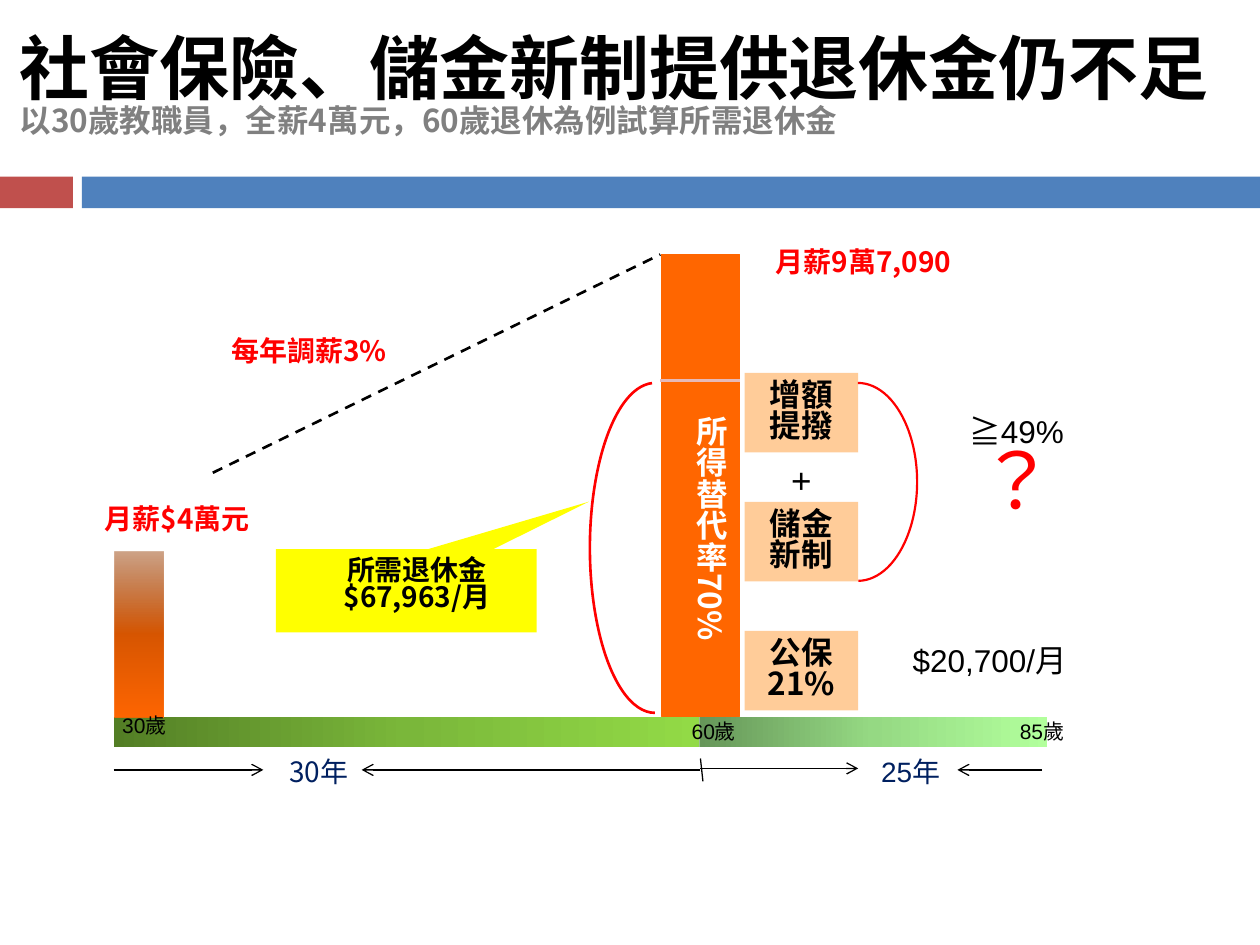
from dataclasses import dataclass

from lxml import etree
from pptx import Presentation
from pptx import util as u
from pptx.dml.color import RGBColor
from pptx.enum import dml, shapes, text
from pptx.oxml import ns

SANS, HAN, ARIAL = "Noto Sans CJK SC", "Noto Sans CJK TC", "Arial"
BLACK = RGBColor(0x00, 0x00, 0x00)
WHITE = RGBColor(0xFF, 0xFF, 0xFF)
GRAY = RGBColor(0x80, 0x80, 0x80)
RED = RGBColor(0xFF, 0x00, 0x00)
BRICK = RGBColor(0xC0, 0x50, 0x4D)
BLUE = RGBColor(0x4F, 0x81, 0xBD)
NAVY = RGBColor(0x00, 0x20, 0x60)
ORANGE = RGBColor(0xFF, 0x66, 0x00)
PEACH = RGBColor(0xFF, 0xCC, 0x99)
PINK = RGBColor(0xE6, 0xB9, 0xB8)
YELLOW = RGBColor(0xFF, 0xFF, 0x00)
RUST = (RGBColor(0x97, 0x3C, 0x00), RGBColor(0xD7, 0x56, 0x00), ORANGE)
GREEN = (RGBColor(0x53, 0x7E, 0x25), RGBColor(0x7A, 0xB7, 0x3A), RGBColor(0x92, 0xDA, 0x46))
MINT = (RGBColor(0x66, 0x96, 0x59), RGBColor(0x95, 0xD9, 0x83), RGBColor(0xB2, 0xFF, 0x9C))
KIND = shapes.MSO_SHAPE


def sub(node, tag, **attrs):
    return etree.SubElement(node, ns.qn(tag), **attrs)


def write(para, words, size=16, font=SANS, color=BLACK, bold=False):
    run = para.add_run()
    run.text = words
    run.font.size, run.font.bold, run.font.name = u.Pt(size), bold, font
    run.font.color.rgb = color
    sub(run.font._element, "a:ea", typeface=SANS if font == ARIAL else font)


@dataclass
class Board:
    """Draws styled elements on the current slide, measured in centimetres."""

    slide: object
    space: float = 0.81

    def shape(self, box, fill=None, kind=KIND.RECTANGLE, line=None, width=0.75, turn=0, adjust=()):
        item = self.slide.shapes.add_shape(kind, *map(u.Cm, box))
        item.shadow.inherit = False
        item.rotation = turn
        for spot, value in enumerate(adjust):
            item.adjustments[spot] = value
        if fill is None:
            item.fill.background()
        else:
            item.fill.solid()
            item.fill.fore_color.rgb = fill
        if line is None:
            item.line.fill.background()
        else:
            item.line.color.rgb = line
            item.line.width = u.Pt(width)
        return item

    def fade(self, box, colors, angle=0, alpha=100):
        item = self.shape(box, colors[0])
        solid = item._element.spPr.find(ns.qn("a:solidFill"))
        grad = etree.Element(ns.qn("a:gradFill"), rotWithShape="1")
        stops = sub(grad, "a:gsLst")
        for spot, color in enumerate(colors):
            stop = sub(stops, "a:gs", pos=str(spot * 50000))
            tint = sub(stop, "a:srgbClr", val=str(color))
            if spot == 0 and alpha < 100:
                sub(tint, "a:alpha", val=str(alpha * 1000))
        sub(grad, "a:lin", ang=str(angle * 60000), scaled="0")
        solid.getparent().replace(solid, grad)

    def line(self, start, end, color=BLACK, width=0.75, dash=False, arrow=False):
        item = self.slide.shapes.add_connector(
            shapes.MSO_CONNECTOR.STRAIGHT, *map(u.Cm, (*start, *end)))
        item.line.color.rgb = color
        item.line.width = u.Pt(width)
        if dash:
            item.line.dash_style = dml.MSO_LINE.DASH
        if arrow:
            sub(item.line._get_or_add_ln(), "a:tailEnd", type="arrow")
        sub(item._element.spPr, "a:effectLst")

    def para(self, frame, first=True, align=text.PP_ALIGN.CENTER, space=None):
        para = frame.paragraphs[0] if first else frame.add_paragraph()
        para.alignment = align
        para.line_spacing = space or self.space
        return para

    def frame(self, box):
        frame = self.slide.shapes.add_textbox(*map(u.Cm, box)).text_frame
        frame.word_wrap = True
        return frame

    def label(self, box, *lines, space=None, upright=False, **style):
        frame = self.frame(box)
        if upright:
            frame._txBody.bodyPr.set("vert", "eaVert")
        for spot, words in enumerate(lines):
            write(self.para(frame, spot == 0, space=space), words, **style)

    def card(self, box, words):
        frame = self.shape(box, PEACH).text_frame
        frame.word_wrap = True
        frame.vertical_anchor = text.MSO_ANCHOR.MIDDLE
        write(self.para(frame), words, size=18, bold=True)

    def title(self, box, head, tail):
        frame = self.frame(box)
        frame.vertical_anchor = text.MSO_ANCHOR.MIDDLE
        para = self.para(frame, align=text.PP_ALIGN.LEFT)
        write(para, head, size=40, font=HAN, bold=True)
        para.add_line_break()
        write(para, tail, size=18, color=GRAY, bold=True)


def main():
    deck = Presentation()
    deck.slide_width, deck.slide_height = u.Cm(25.4), u.Cm(19.05)
    board = Board(deck.slides.add_slide(deck.slide_layouts[6]))

    board.shape((0, 3.56, 1.47, 0.64), BRICK)
    board.shape((1.65, 3.56, 23.75, 0.64), BLUE)
    board.fade((2.29, 14.45, 11.81, 0.61), GREEN)
    board.fade((14.1, 14.45, 7.01, 0.61), MINT)
    board.shape((13.34, 5.13, 1.57, 9.32), ORANGE, line=ORANGE)
    board.fade((2.31, 11.13, 0.99, 3.33), RUST, angle=90, alpha=47)
    board.line((4.29, 9.53), (13.31, 5.13), width=1.5, dash=True)
    board.title((0.15, 0.43, 24.97, 2.74), "社會保險、儲金新制提供退休金仍不足",
                "以30歲教職員，全薪4萬元，60歲退休為例試算所需退休金")

    for box, words in (((4.29, 6.73, 3.89, 0.94), "每年調薪3%"),
                       ((14.91, 4.93, 5, 0.94), "月薪9萬7,090"),
                       ((1.5, 10.11, 4.14, 0.94), "月薪$4萬元")):
        board.label(box, words, color=RED, bold=True)
    for box, words in (((2.11, 14.33, 1.6, 0.76), "30歲"),
                       ((13.49, 14.45, 1.8, 0.76), "60歲"),
                       ((19.71, 14.45, 2.59, 0.76), "85歲")):
        board.label(box, words, size=12, font=ARIAL)

    board.line((13.31, 7.67), (14.91, 7.67), color=PINK, width=1.5)
    board.label((13.34, 8.13, 1.37, 5.21), "所得替代率70%",
                upright=True, size=18, color=WHITE, bold=True)
    board.shape((11.89, 7.72, 2.62, 6.65), kind=KIND.ARC, line=RED, width=1.5,
                turn=180, adjust=(162, 53.41))
    board.shape((5.56, 11.07, 5.26, 1.68), YELLOW, KIND.RECTANGULAR_CALLOUT,
                turn=180, adjust=(-0.7, 1.07))
    board.label((6.12, 11.13, 4.57, 1.63), "所需退休金", "$67,963/月", bold=True)

    for row, words in enumerate(("增額提撥", "儲金新制", "公保21%")):
        board.card((15.01, 7.52 + row * 2.6, 2.29, 1.6), words)
    board.label((15.7, 9.12, 0.79, 1.12), "+", space=1, size=20, font=ARIAL)
    board.label((17.6, 12.93, 4.7, 1.02), "$20,700/月", size=18, font=ARIAL)
    board.shape((16.1, 7.72, 2.39, 3.99), kind=KIND.ARC, line=RED, width=1.25,
                adjust=(162, 53.81))
    para = board.para(board.frame((18.49, 8.33, 4.01, 2.13)))
    write(para, "≧", size=18, font=HAN)
    write(para, "49% ", size=18, font=ARIAL)
    write(para, "？", size=44, font=HAN, color=RED)

    for start, end, y in ((2.29, 5.31, 15.52), (14.12, 7.29, 15.52),
                          (14.12, 17.3, 15.49), (21.01, 19.3, 15.52)):
        board.line((start, y), (end, y), arrow=True)
    board.line((14.12, 15.29), (14.17, 15.75))
    board.label((5.56, 15.21, 1.73, 0.94), "30年", color=NAVY)
    board.label((17.4, 15.21, 1.91, 0.94), "25年", font=ARIAL, color=NAVY)

    deck.save("out.pptx")


if __name__ == "__main__":
    main()
